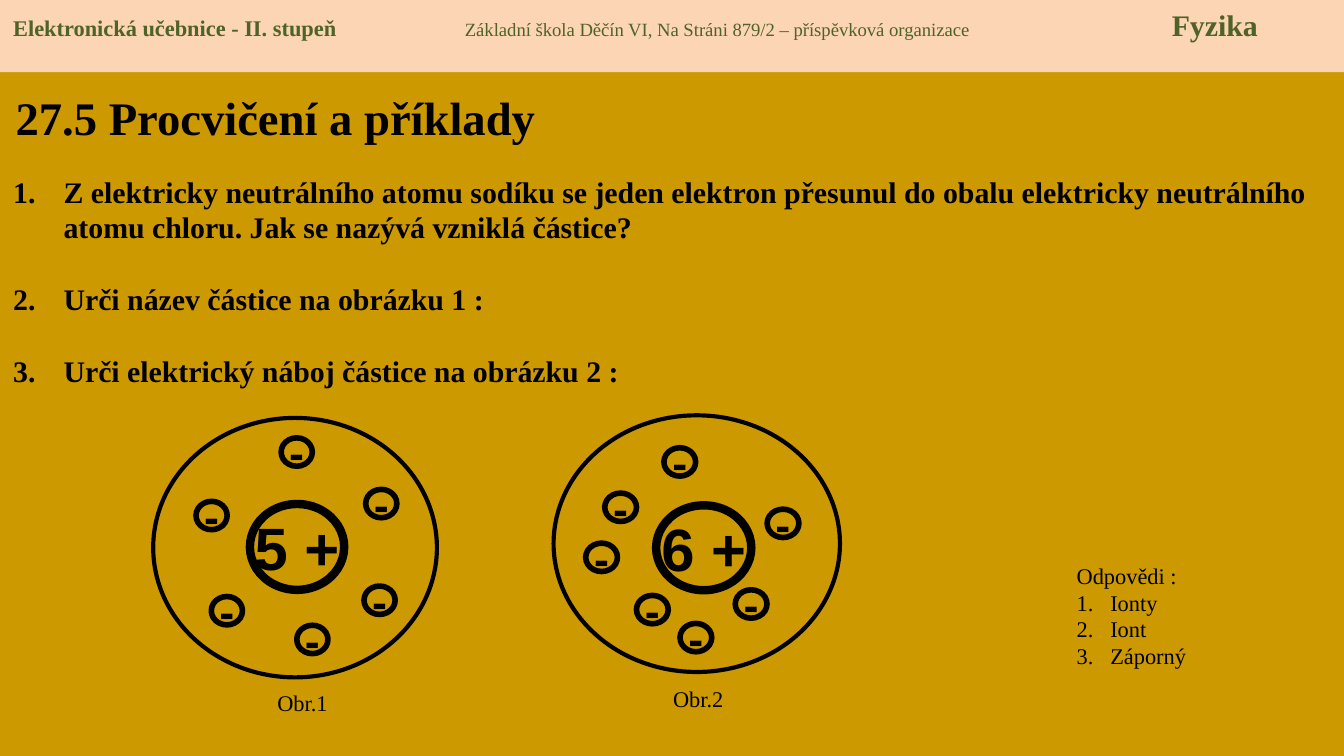
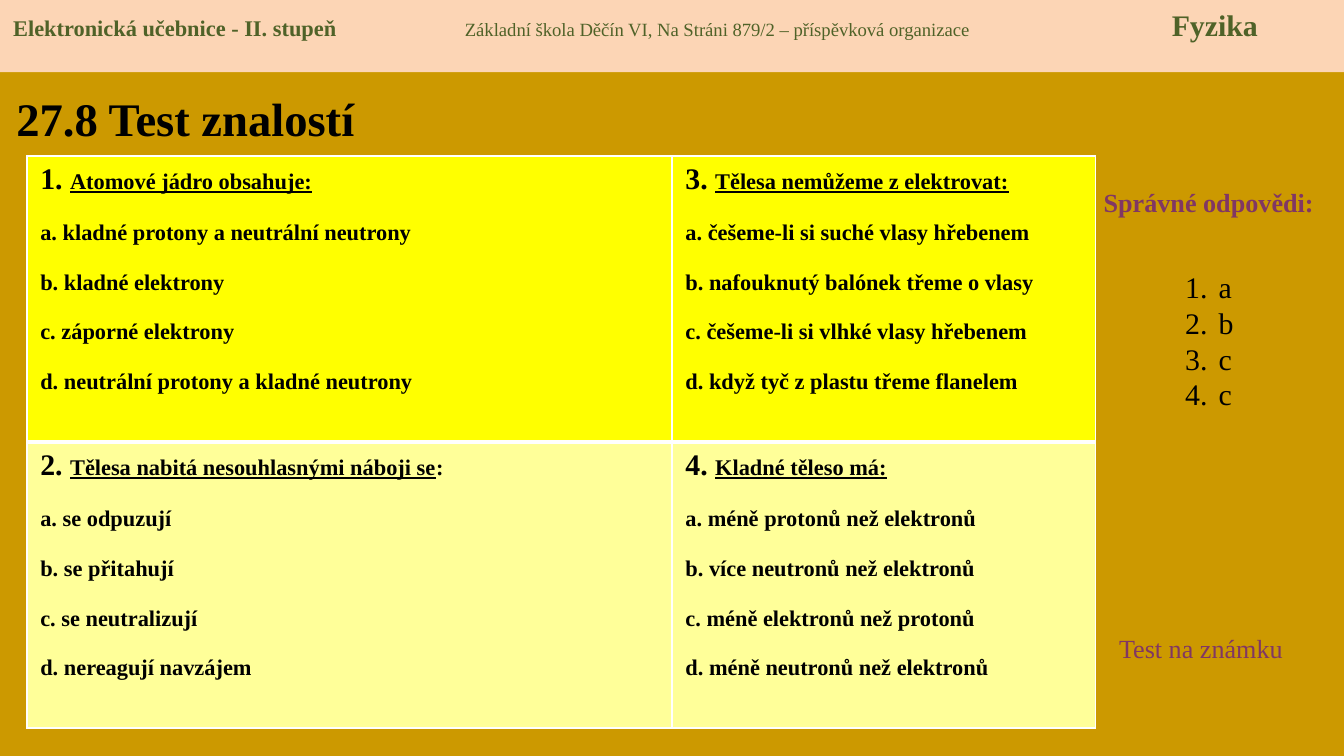
from lxml.etree import SubElement
from pptx import Presentation
from pptx.dml.color import RGBColor
from pptx.enum.shapes import MSO_SHAPE
from pptx.enum.text import MSO_ANCHOR, MSO_AUTO_SIZE, PP_ALIGN
from pptx.oxml.ns import qn
from pptx.util import Pt

# Content
COLORS = {"background": "CC9900", "band": "FCD5B5", "header": "4F6228",
          "text": "000000", "accent": "813763", "border": "FFFFFF",
          "top row": "FFFF00", "bottom row": "FFFF99"}
SERIF, SANS = "Times New Roman", "Arial"

HEADER = [("Elektronická učebnice - II. stupeň", 12, True),
          ("\tZákladní škola Děčín VI, Na Stráni 879/2 – příspěvková organizace", 10, False),
          ("\tFyzika", 16, True)]
HEADER_TABS = [242, 620.7]

EXERCISE_TITLE = "27.5 Procvičení a příklady"
QUESTIONS = [
    "Z elektricky neutrálního atomu sodíku se jeden elektron přesunul do obalu "
    "elektricky neutrálního atomu chloru. Jak se nazývá vzniklá částice?",
    "Urči název částice na obrázku 1 :",
    "Urči elektrický náboj částice na obrázku 2 :",
]
ANSWERS_LABEL = "Odpovědi :"
ANSWERS = ["Ionty", "Iont", "Záporný"]

# Frames are left, top, width, height; electrons are left, top
ATOMS = [
    {"charge": "5 +", "shell": (82.1, 223.9, 152, 139), "nucleus": (133.9, 270, 50.5, 46),
     "electron size": (16.7, 15.2),
     "electrons": [(105, 268.6), (113.2, 319.6), (150.6, 234.6),
                   (195.9, 262.2), (195, 314), (159, 335)],
     "caption": "Obr.1", "caption at": (141.5, 365.8)},
    {"charge": "6 +", "shell": (296.6, 222.5, 153.4, 137.5), "nucleus": (351.5, 270.7, 51, 45.5),
     "electron size": (17, 15.2),
     "electrons": [(324, 264.2), (411, 272.8), (355.7, 239.9), (393.9, 316),
                   (364.3, 334), (341, 319), (313.8, 291)],
     "caption": "Obr.2", "caption at": (353.5, 363.6)},
]

TEST_TITLE = "27.8 Test znalostí"
# Number, question, underlined part excluded from the end, options
TEST = [
    [("1.", "Atomové jádro obsahuje:", "",
      ["a. kladné protony a neutrální neutrony", "b. kladné elektrony",
       "c. záporné elektrony", "d. neutrální protony a kladné neutrony"]),
     ("3.", "Tělesa nemůžeme z elektrovat:", "",
      ["a. češeme-li si suché vlasy hřebenem", "b. nafouknutý balónek třeme o vlasy",
       "c. češeme-li si vlhké vlasy hřebenem", "d. když tyč z plastu třeme flanelem"])],
    [("2.", "Tělesa nabitá nesouhlasnými náboji se", ":",
      ["a. se odpuzují", "b. se přitahují", "c. se neutralizují", "d. nereagují navzájem"]),
     ("4.", "Kladné těleso má:", "",
      ["a. méně protonů než elektronů", "b. více neutronů než elektronů",
       "c. méně elektronů než protonů", "d. méně neutronů než elektronů"])],
]
ROW_FILLS = ["top row", "bottom row"]
COLUMN_WIDTHS, ROW_HEIGHT = [345.6, 226.8], 153.3
KEY_LABEL = "Správné odpovědi:"
KEY = ["a", "b", "c", "c"]
GRADED_NOTE = "Test na známku"


def rgb(name):
    return RGBColor.from_string(COLORS[name])


def points(*values):
    return [Pt(value) for value in values]


def add_run(paragraph, text, size, bold=False, color="text", font=SERIF, underline=False):
    run = paragraph.add_run()
    run.text = text
    run.font.name, run.font.size, run.font.bold = font, Pt(size), bold
    run.font.underline = underline
    run.font.color.rgb = rgb(color)


def number(paragraph, indent):
    properties = paragraph._p.get_or_add_pPr()
    properties.set("marL", str(Pt(indent)))
    properties.set("indent", str(-Pt(indent)))
    SubElement(properties, qn("a:buFont"), typeface="+mj-lt")
    SubElement(properties, qn("a:buAutoNum"), type="arabicPeriod")


def next_paragraph(frame):
    first = frame.paragraphs[0]
    return first if not first.runs else frame.add_paragraph()


def add_text(slide, frame, lines=(), wrap=True):
    """Add a box; each line is a text with its run format."""
    text_frame = slide.shapes.add_textbox(*points(*frame)).text_frame
    text_frame.word_wrap = wrap
    for text, style in lines:
        add_run(next_paragraph(text_frame), text, **style)
    return text_frame


def add_numbered(text_frame, items, size, indent, bold=False, gap=0):
    for index, item in enumerate(items):
        paragraph = next_paragraph(text_frame)
        number(paragraph, indent)
        if index and gap:
            paragraph.space_before = Pt(gap)
        add_run(paragraph, item, size, bold)


def add_header(slide):
    band = slide.shapes.add_shape(MSO_SHAPE.RECTANGLE, *points(0, 0, 720, 38.7))
    band.shadow.inherit = False
    band.fill.solid()
    band.fill.fore_color.rgb = rgb("band")
    band.line.fill.background()
    band.text_frame.vertical_anchor = MSO_ANCHOR.TOP
    paragraph = band.text_frame.paragraphs[0]
    paragraph.alignment = PP_ALIGN.LEFT
    tabs = SubElement(paragraph._p.get_or_add_pPr(), qn("a:tabLst"))
    for position in HEADER_TABS:
        SubElement(tabs, qn("a:tab"), pos=str(Pt(position)), algn="l")
    for text, size, bold in HEADER:
        add_run(paragraph, text, size, bold, "header")


def add_slide(deck, title_text, title_frame):
    slide = deck.slides.add_slide(deck.slide_layouts[5])
    slide.background.fill.solid()
    slide.background.fill.fore_color.rgb = rgb("background")
    title = slide.shapes.title
    title.left, title.top, title.width, title.height = points(*title_frame)
    title.text_frame.auto_size = MSO_AUTO_SIZE.NONE
    title.text_frame.vertical_anchor = MSO_ANCHOR.MIDDLE
    paragraph = title.text_frame.paragraphs[0]
    paragraph.alignment = PP_ALIGN.LEFT
    add_run(paragraph, title_text, 25, True)
    add_header(slide)
    return slide


def add_circle(group, frame, line_width, label="", size=24):
    circle = group.shapes.add_shape(MSO_SHAPE.OVAL, *points(*frame))
    circle.shadow.inherit = False
    circle.fill.background()
    circle.line.color.rgb = rgb("text")
    circle.line.width = Pt(line_width)
    if label:
        circle.text_frame.word_wrap = False
        circle.text_frame.vertical_anchor = MSO_ANCHOR.MIDDLE
        paragraph = circle.text_frame.paragraphs[0]
        paragraph.alignment = PP_ALIGN.CENTER
        add_run(paragraph, label, size, True, font=SANS)


def add_atom(slide, atom):
    group = slide.shapes.add_group_shape()
    add_circle(group, atom["shell"], 2.25)
    add_circle(group, atom["nucleus"], 4.5, atom["charge"], 32)
    for electron in atom["electrons"]:
        add_circle(group, electron + atom["electron size"], 3, "-")
    add_text(slide, atom["caption at"] + (42, 21.8),
             [(atom["caption"], {"size": 12})], wrap=False)


def set_borders(cell, widths):
    properties = cell._tc.get_or_add_tcPr()
    for index, (side, width) in enumerate(widths.items()):
        line = properties.makeelement(qn(f"a:ln{side}"), {"w": str(Pt(width))})
        fill = SubElement(line, qn("a:solidFill"))
        SubElement(fill, qn("a:srgbClr"), val=COLORS["border"])
        properties.insert(index, line)


def fill_test_cell(cell, question, row):
    label, stem, ending, options = question
    cell.fill.solid()
    cell.fill.fore_color.rgb = rgb(ROW_FILLS[row])
    set_borders(cell, {"L": 1, "R": 1, "T": 3 if row else 1, "B": 1 if row else 3})
    heading = cell.text_frame.paragraphs[0]
    add_run(heading, label + " ", 16, True)
    add_run(heading, stem, 12, True, underline=True)
    if ending:
        add_run(heading, ending, 12, True)
    for option in options:
        paragraph = cell.text_frame.add_paragraph()
        paragraph.space_before = Pt(13.3)
        add_run(paragraph, option, 12, True)


def build_exercises(deck):
    slide = add_slide(deck, EXERCISE_TITLE, (1.2, 39, 314.6, 47))
    questions = add_text(slide, (0, 89.3, 720, 123.8))
    add_numbered(questions, QUESTIONS, 16, 27, bold=True, gap=19.3)
    for atom in ATOMS:
        add_atom(slide, atom)
    answers = add_text(slide, (569.7, 297.4, 147.6, 65.5), [(ANSWERS_LABEL, {"size": 12})])
    add_numbered(answers, ANSWERS, 12, 18)


def build_test(deck):
    slide = add_slide(deck, TEST_TITLE, (1.6, 39.6, 229.7, 47))
    table = slide.shapes.add_table(
        len(TEST), len(COLUMN_WIDTHS),
        *points(14.4, 83.5, sum(COLUMN_WIDTHS), ROW_HEIGHT * len(TEST))).table
    for column, width in zip(table.columns, COLUMN_WIDTHS):
        column.width = Pt(width)
    for row, questions in enumerate(TEST):
        table.rows[row].height = Pt(ROW_HEIGHT)
        for column, question in enumerate(questions):
            fill_test_cell(table.cell(row, column), question, row)

    # Answer key beside the table
    accent = {"size": 14, "color": "accent"}
    label = add_text(slide, (579.6, 96.5, 136, 24.5), [(KEY_LABEL, accent | {"bold": True})])
    label.paragraphs[0].alignment = PP_ALIGN.CENTER
    key = add_text(slide, (627.8, 121, 39.6, 143.3))
    key.margin_top = Pt(22.9)
    add_numbered(key, KEY, 16, 18)
    add_text(slide, (592.4, 335.5, 113, 24.5), [(GRADED_NOTE, accent)])


def main():
    deck = Presentation()
    deck.slide_width, deck.slide_height = points(720, 405)
    build_exercises(deck)
    build_test(deck)
    deck.save("out.pptx")


if __name__ == "__main__":
    main()
